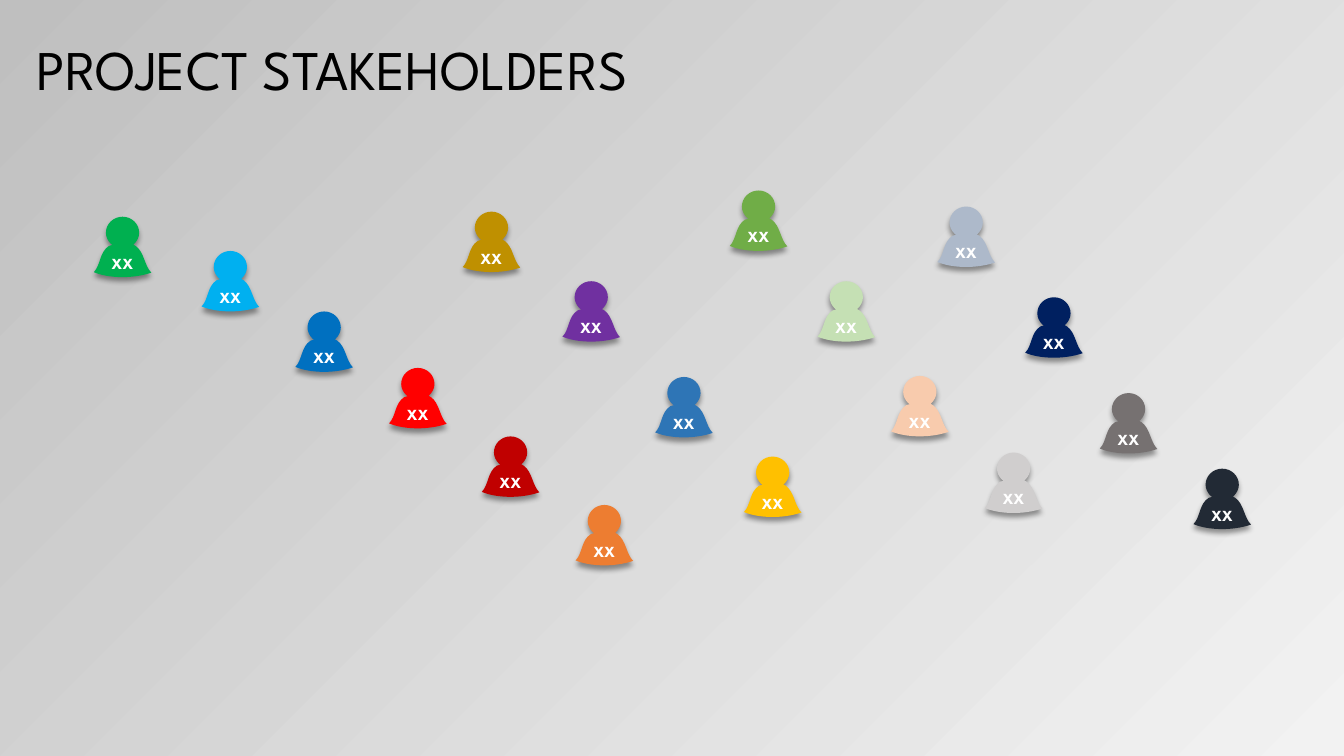
from collections import namedtuple

from lxml import etree
from pptx import Presentation
from pptx import util as u
from pptx.dml.color import RGBColor
from pptx.enum import text
from pptx.oxml import ns

Box = namedtuple("Box", "left top width height")

FONT = "League Spartan"
BLACK = RGBColor(0x00, 0x00, 0x00)
WHITE = RGBColor(0xFF, 0xFF, 0xFF)
PALE_GREY = RGBColor(0xF2, 0xF2, 0xF2)
MID_GREY = RGBColor(0xBF, 0xBF, 0xBF)
GREEN = RGBColor(0x00, 0xB0, 0x50)
SKY = RGBColor(0x00, 0xB0, 0xF0)
BLUE = RGBColor(0x00, 0x70, 0xC0)
RED = RGBColor(0xFF, 0x00, 0x00)
DARK_RED = RGBColor(0xC0, 0x00, 0x00)
ORANGE = RGBColor(0xED, 0x7D, 0x31)
OCHRE = RGBColor(0xBF, 0x90, 0x00)
PURPLE = RGBColor(0x70, 0x30, 0xA0)
STEEL = RGBColor(0x2E, 0x75, 0xB6)
AMBER = RGBColor(0xFF, 0xC0, 0x00)
LEAF = RGBColor(0x70, 0xAD, 0x47)
MINT = RGBColor(0xC5, 0xE0, 0xB4)
PEACH = RGBColor(0xF8, 0xCB, 0xAD)
SILVER = RGBColor(0xD0, 0xCE, 0xCE)
MIST = RGBColor(0xAD, 0xB9, 0xCA)
NAVY = RGBColor(0x00, 0x20, 0x60)
TAUPE = RGBColor(0x76, 0x71, 0x71)
INK = RGBColor(0x22, 0x2A, 0x35)

GRID = 100
TITLE_CELLS = (1.95, 3.87, 92.03, 10.27)
FIGURE_CELLS = (4.28, 8)
STAKEHOLDERS = [
    (6.98, 28.67, GREEN), (15, 33.2, SKY), (21.98, 41.2, BLUE),
    (28.95, 48.67, RED), (35.85, 57.73, DARK_RED), (42.83, 66.8, ORANGE),
    (34.43, 28, OCHRE), (41.85, 37.2, PURPLE), (48.75, 49.87, STEEL),
    (55.35, 60.4, AMBER), (54.3, 25.2, LEAF), (60.83, 37.2, MINT),
    (66.3, 49.73, PEACH), (73.28, 59.87, SILVER), (69.75, 27.33, MIST),
    (76.28, 39.33, NAVY), (81.83, 52, TAUPE), (88.8, 62, INK),
]

FIGURE_UNITS = (57, 60)
FIGURE_START = (28.5, 0)
FIGURE_SEGMENTS = [
    [(37.5, 0), (45, 7), (45, 16)],
    [(45, 20), (43, 24), (40, 27)],
    [(39, 27.6)],
    [(41.5, 29)],
    [(50, 35), (50, 48.5), (57, 55.5)],
    [(38, 62), (14, 61), (0, 55)],
    [(7, 48), (5.5, 35), (15, 29)],
    [(18.5, 28)],
    [(17, 27)],
    [(14, 24), (12, 20), (12, 16)],
    [(12, 7), (19.5, 0), (28.5, 0)],
]


def cells(deck, left, top, width, height):
    """Turn grid columns and rows into a box on the slide."""
    column, row = deck.slide_width / GRID, deck.slide_height / GRID
    return Box(*(u.Emu(round(size)) for size in
                 (left * column, top * row, width * column, height * row)))


def write(shape, words, size, color, bold=False, align=text.PP_ALIGN.LEFT,
          anchor=text.MSO_ANCHOR.TOP, line_spacing=None, space_after=None):
    """Put one formatted paragraph into a shape."""
    frame = shape.text_frame
    frame.word_wrap = True
    frame.vertical_anchor = anchor
    para = frame.paragraphs[0]
    para.alignment = align
    para.line_spacing = line_spacing
    para.space_after = space_after
    span = para.add_run()
    span.text = words
    span.font.name = FONT
    span.font.size = u.Pt(size)
    span.font.bold = bold
    span.font.color.rgb = color


def add_drop_shadow(shape):
    """Give a shape a soft shadow straight below it."""
    shape.shadow.inherit = False
    effects = shape.element.spPr.find(ns.qn("a:effectLst"))
    shadow = etree.SubElement(effects, ns.qn("a:outerShdw"), blurRad=str(u.Pt(4)),
                              dist=str(u.Pt(3)), dir="5400000", algn="t", rotWithShape="0")
    tint = etree.SubElement(shadow, ns.qn("a:srgbClr"), val=str(BLACK))
    etree.SubElement(tint, ns.qn("a:alpha"), val="40000")


def add_outline(page, box):
    """Add the figure outline, turning its three-point segments into curves."""
    across, down = box.width / FIGURE_UNITS[0], box.height / FIGURE_UNITS[1]
    start, *ends = [(x * across, y * down) for x, y in
                    [FIGURE_START, *(segment[-1] for segment in FIGURE_SEGMENTS)]]
    outline = page.shapes.build_freeform(*start, scale=1.0)
    outline.add_line_segments(ends, close=True)
    figure = outline.convert_to_shape(box.left, box.top)
    figure.height = box.height
    contour = next(figure.element.iter(ns.qn("a:path")))
    contour.set("h", str(box.height))
    for edge, segment in zip(contour.findall(ns.qn("a:lnTo")), FIGURE_SEGMENTS):
        if len(segment) == 3:
            curve = etree.Element(ns.qn("a:cubicBezTo"))
            for x, y in segment:
                etree.SubElement(curve, ns.qn("a:pt"), x=str(round(x * across)),
                                 y=str(round(y * down)))
            contour.replace(edge, curve)
    return figure


def add_stakeholder(page, box, color):
    """Draw one labelled figure filling the box."""
    figure = add_outline(page, box)
    figure.fill.solid()
    figure.fill.fore_color.rgb = color
    figure.line.fill.background()
    add_drop_shadow(figure)
    write(figure, "XX", 11, WHITE, bold=True, align=text.PP_ALIGN.CENTER,
          anchor=text.MSO_ANCHOR.BOTTOM, line_spacing=1.07, space_after=u.Pt(8))


def add_title(page, box):
    """Place and fill the title."""
    title = page.shapes.title
    title.left, title.top, title.width, title.height = box
    write(title, "PROJECT STAKEHOLDERS", 40, BLACK)
    title.text_frame.auto_size = text.MSO_AUTO_SIZE.NONE


def paint_background(page):
    """Fill the background with a diagonal grey gradient."""
    fill = page.background.fill
    fill.gradient()
    fill.gradient_angle = 135
    for stop, position, color in zip(fill.gradient_stops, (0, 1), (PALE_GREY, MID_GREY)):
        stop.position = position
        stop.color.rgb = color


def add_stakeholder_slide(deck):
    """Build the slide with its title and scattered figures."""
    page = deck.slides.add_slide(deck.slide_layouts[5])
    paint_background(page)
    for column, row, color in STAKEHOLDERS:
        add_stakeholder(page, cells(deck, column, row, *FIGURE_CELLS), color)
    add_title(page, cells(deck, *TITLE_CELLS))


def main():
    """Create the deck and save it."""
    deck = Presentation()
    deck.slide_width, deck.slide_height = u.Inches(13.33), u.Inches(7.5)
    add_stakeholder_slide(deck)
    deck.save("out.pptx")


if __name__ == "__main__":
    main()
